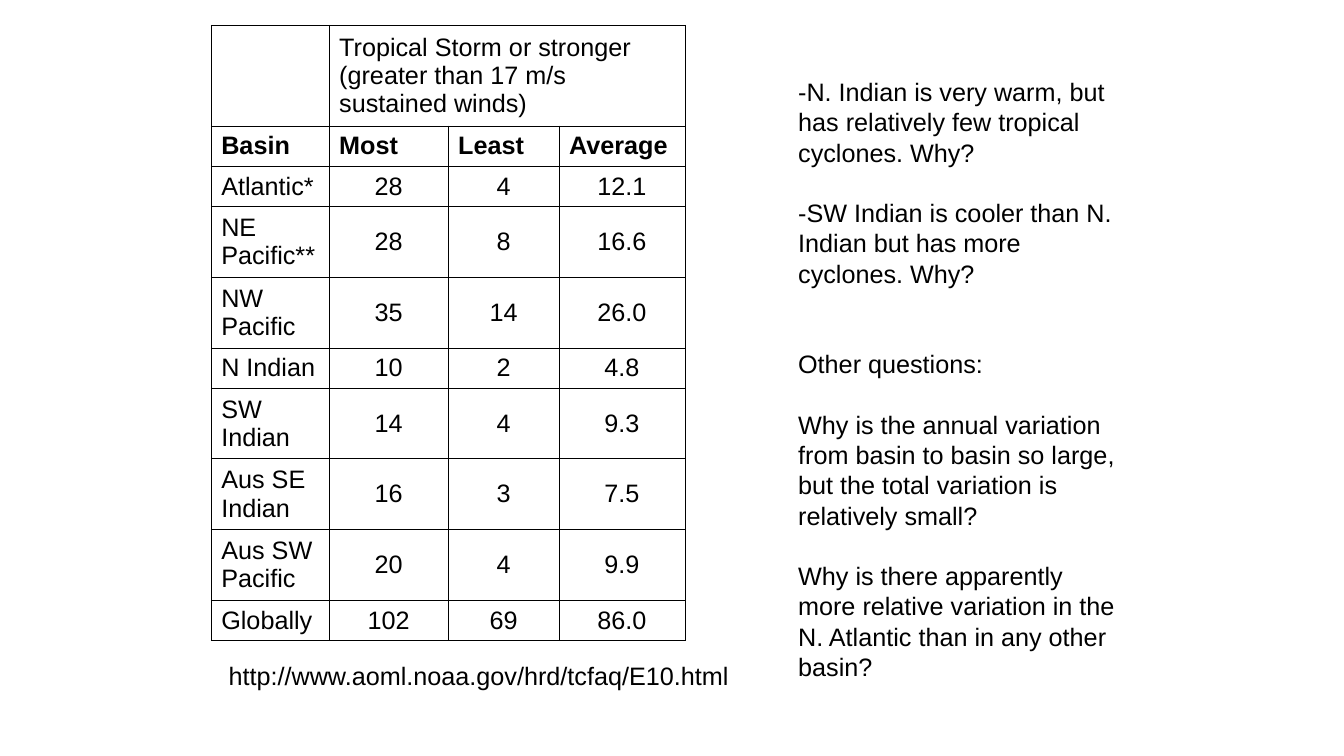
from pptx import Presentation
from pptx.dml.color import RGBColor
from pptx.enum import text as t
from pptx.oxml import parse_xml
from pptx.oxml.ns import nsdecls
from pptx.util import Pt

BLACK = RGBColor(0, 0, 0)
WHITE = RGBColor(255, 255, 255)
FONT = "Arial"
SIZE = 18
LINE = 21.6

COLS = [84.24, 84.96, 79.2, 90]
ROWS = [72, 28.8, 28.8, 50.4, 50.4, 28.8, 50.4, 50.4, 50.4, 28.8]
STORMS = [
    ["", "Tropical Storm or stronger (greater than 17 m/s sustained winds)", "", ""],
    ["Basin", "Most", "Least", "Average"],
    ["Atlantic*", "28", "4", "12.1"],
    ["NE Pacific**", "28", "8", "16.6"],
    ["NW Pacific", "35", "14", "26.0"],
    ["N Indian", "10", "2", "4.8"],
    ["SW Indian", "14", "4", "9.3"],
    ["Aus SE Indian", "16", "3", "7.5"],
    ["Aus SW Pacific", "20", "4", "9.9"],
    ["Globally", "102", "69", "86.0"],
]
ASKS = [
    ("-N. Indian is very warm, but has relatively few tropical cyclones. Why?", 0),
    ("-SW Indian is cooler than N. Indian but has more cyclones. Why?", 1),
    ("Other questions:", 2),
    ("Why is the annual variation from basin to basin so large, "
     "but the total variation is relatively small?", 1),
    ("Why is there apparently more relative variation in the "
     "N. Atlantic than in any other basin?", 1),
]


def style(para, bold=False):
    """Give the runs of a paragraph the common font."""
    for run in para.runs:
        font = run.font
        font.name, font.size, font.bold = FONT, Pt(SIZE), bold
        font.color.rgb = BLACK


def border(cell):
    """Draw thin black lines on all four sides of a cell."""
    props = cell._tc.get_or_add_tcPr()
    for i, side in enumerate(("lnL", "lnR", "lnT", "lnB")):
        props.insert(i, parse_xml(
            f'<a:{side} {nsdecls("a")} w="{Pt(0.75)}"><a:solidFill>'
            f'<a:srgbClr val="{BLACK}"/></a:solidFill></a:{side}>'))


def storms(slide, x, y):
    """Place the table of storm counts by basin."""
    frame = slide.shapes.add_table(len(ROWS), len(COLS), Pt(x), Pt(y),
                                   Pt(sum(COLS)), Pt(sum(ROWS)))
    table = frame.table
    table.first_row = table.horz_banding = False
    for col, wide in zip(table.columns, COLS):
        col.width = Pt(wide)
    for row, high in zip(table.rows, ROWS):
        row.height = Pt(high)
    for r, line in enumerate(STORMS):
        for c, word in enumerate(line):
            cell = table.cell(r, c)
            cell.text = word
            cell.vertical_anchor = t.MSO_ANCHOR.MIDDLE
            cell.fill.solid()
            cell.fill.fore_color.rgb = WHITE
            border(cell)
            para = cell.text_frame.paragraphs[0]
            if r > 1 and c > 0:
                para.alignment = t.PP_ALIGN.CENTER
            style(para, r == 1)
    table.cell(0, 1).merge(table.cell(0, 3))


def link(slide, x, y, w, h):
    """Place the web address of the data."""
    frame = slide.shapes.add_textbox(Pt(x), Pt(y), Pt(w), Pt(h)).text_frame
    frame.word_wrap = False
    frame.text = "http://www.aoml.noaa.gov/hrd/tcfaq/E10.html"
    style(frame.paragraphs[0])


def asks(slide, x, y, w, h):
    """Place the questions, spaced by whole lines."""
    frame = slide.shapes.add_textbox(Pt(x), Pt(y), Pt(w), Pt(h)).text_frame
    frame.word_wrap = True
    frame.text = "\n".join(ask for ask, gap in ASKS)
    for para, (ask, gap) in zip(frame.paragraphs, ASKS):
        if gap:
            para.space_before = Pt(gap * LINE)
        style(para)


def main():
    """Build the slide and save it."""
    deck = Presentation()
    deck.slide_width, deck.slide_height = Pt(960), Pt(540)
    slide = deck.slides.add_slide(deck.slide_layouts[6])
    link(slide, 156.24, 468, 372.24, 28.8)
    storms(slide, 150.9, 18)
    asks(slide, 563.04, 51.12, 241.2, 439.92)
    deck.save("out.pptx")


if __name__ == "__main__":
    main()
